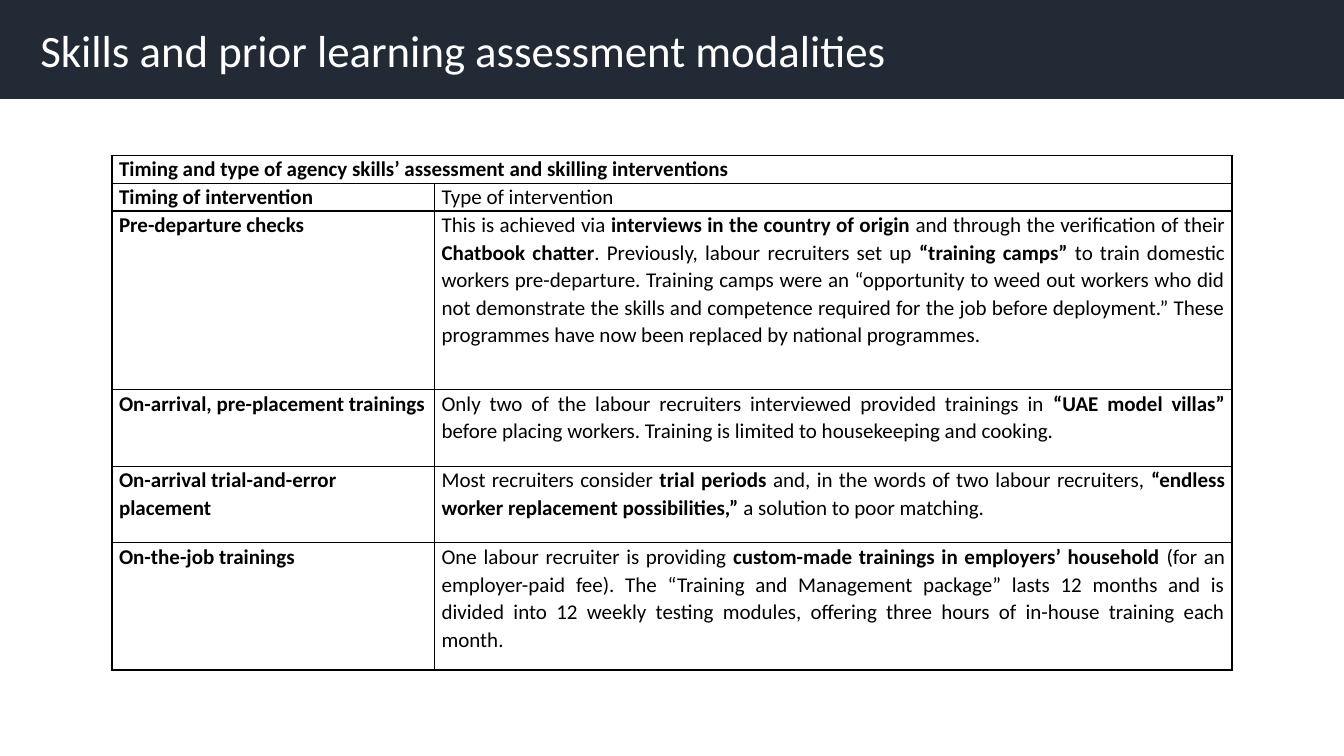
from dataclasses import dataclass

from lxml.etree import SubElement
from pptx import Presentation
from pptx.dml.color import RGBColor
from pptx.enum.shapes import MSO_SHAPE
from pptx.enum.text import MSO_ANCHOR, PP_ALIGN
from pptx.oxml.ns import qn
from pptx.slide import Slide
from pptx.table import _Cell
from pptx.text.text import _Paragraph
from pptx.util import Inches, Length, Pt

NAVY = RGBColor(0x22, 0x2A, 0x35)
WHITE = RGBColor(0xFF, 0xFF, 0xFF)
BLACK = RGBColor(0x00, 0x00, 0x00)

FONT = "Calibri"
SLIDE_WIDTH = Inches(13.33)
SLIDE_HEIGHT = Inches(7.5)
GRID_COLUMNS = 12
GRID_ROWS = 27
BOLD_MARK = "**"

BANNER_ROWS = 3.53
TABLE_LEFT = 1
TABLE_TOP = 5.54
TABLE_COLUMNS = (2.88, 7.12)


@dataclass(frozen=True)
class Entry:
    timing: str
    intervention: str
    rows: float


HEADING = "Timing and type of agency skills’ assessment and skilling interventions"
ENTRIES = (
    Entry(f"**{HEADING}**", "", 1),
    Entry("**Timing of intervention**", "Type of intervention", 1),
    Entry(
        "**Pre-departure checks**",
        "This is achieved via **interviews in the country of origin **and through the "
        "verification of their **Chatbook chatter**. Previously, labour recruiters set up "
        "**“training camps” **to train domestic workers pre-departure. Training camps were "
        "an “opportunity to weed out workers who did not demonstrate the skills and "
        "competence required for the job before deployment.” These programmes have now "
        "been replaced by national programmes.",
        6.37,
    ),
    Entry(
        "**On-arrival, pre-placement trainings**",
        "Only two of the labour recruiters interviewed provided trainings in "
        "**“UAE model villas” **before placing workers. Training is limited to "
        "housekeeping and cooking.",
        2.74,
    ),
    Entry(
        "**On-arrival trial-and-error placement**",
        "Most recruiters consider **trial periods **and, in the words of two labour "
        "recruiters, **“endless worker replacement possibilities,” **a solution to "
        "poor matching.",
        2.74,
    ),
    Entry(
        "**On-the-job trainings**",
        "One labour recruiter is providing **custom-made trainings in employers’ "
        "household **(for an employer-paid fee). The “Training and Management package” "
        "lasts 12 months and is divided into 12 weekly testing modules, offering three "
        "hours of in-house training each month.",
        4.54,
    ),
)


def columns(count: float) -> Length:
    return Length(round(SLIDE_WIDTH * count / GRID_COLUMNS))


def rows(count: float) -> Length:
    return Length(round(SLIDE_HEIGHT * count / GRID_ROWS))


def style_paragraph(para: _Paragraph, size: float, color: RGBColor, align: PP_ALIGN) -> None:
    para.alignment = align
    para.font.name = FONT
    para.font.size = Pt(size)
    para.font.color.rgb = color


def outline_cell(cell: _Cell) -> None:
    properties = cell._tc.get_or_add_tcPr()
    for side in ("a:lnL", "a:lnR", "a:lnT", "a:lnB"):
        line = SubElement(properties, qn(side), w=str(Pt(1)))
        fill = SubElement(line, qn("a:solidFill"))
        SubElement(fill, qn("a:srgbClr"), val=str(BLACK))


def fill_cell(cell: _Cell, text: str, align: PP_ALIGN) -> None:
    outline_cell(cell)
    cell.fill.solid()
    cell.fill.fore_color.rgb = WHITE
    cell.margin_left = cell.margin_right = Inches(0.07)
    cell.margin_top = cell.margin_bottom = 0
    para = cell.text_frame.paragraphs[0]
    style_paragraph(para, 15, BLACK, align)
    para.line_spacing = 1.07
    for index, part in enumerate(text.split(BOLD_MARK)):
        if part:
            span = para.add_run()
            span.text = part
            span.font.bold = index % 2 == 1


def add_banner(page: Slide, title: str) -> None:
    banner = page.shapes.add_shape(
        MSO_SHAPE.RECTANGLE, 0, 0, SLIDE_WIDTH, rows(BANNER_ROWS)
    )
    banner.shadow.inherit = False
    banner.fill.solid()
    banner.fill.fore_color.rgb = NAVY
    banner.line.fill.background()
    frame = banner.text_frame
    frame.word_wrap = True
    frame.margin_left = Inches(0.4)
    frame.vertical_anchor = MSO_ANCHOR.MIDDLE
    frame.text = title
    style_paragraph(frame.paragraphs[0], 32, WHITE, PP_ALIGN.LEFT)


def add_interventions(page: Slide) -> None:
    table = page.shapes.add_table(
        len(ENTRIES),
        len(TABLE_COLUMNS),
        columns(TABLE_LEFT),
        rows(TABLE_TOP),
        columns(sum(TABLE_COLUMNS)),
        rows(sum(entry.rows for entry in ENTRIES)),
    ).table
    table.first_row = False
    table.horz_banding = False
    for column, width in zip(table.columns, TABLE_COLUMNS):
        column.width = columns(width)
    for index, entry in enumerate(ENTRIES):
        table.rows[index].height = rows(entry.rows)
        fill_cell(table.cell(index, 0), entry.timing, PP_ALIGN.LEFT)
        fill_cell(table.cell(index, 1), entry.intervention, PP_ALIGN.JUSTIFY)
    table.cell(0, 0).merge(table.cell(0, 1))


def main() -> None:
    deck = Presentation()
    deck.slide_width = SLIDE_WIDTH
    deck.slide_height = SLIDE_HEIGHT
    page = deck.slides.add_slide(deck.slide_layouts[6])
    add_interventions(page)
    add_banner(page, "Skills and prior learning assessment modalities")
    deck.save("out.pptx")


if __name__ == "__main__":
    main()
